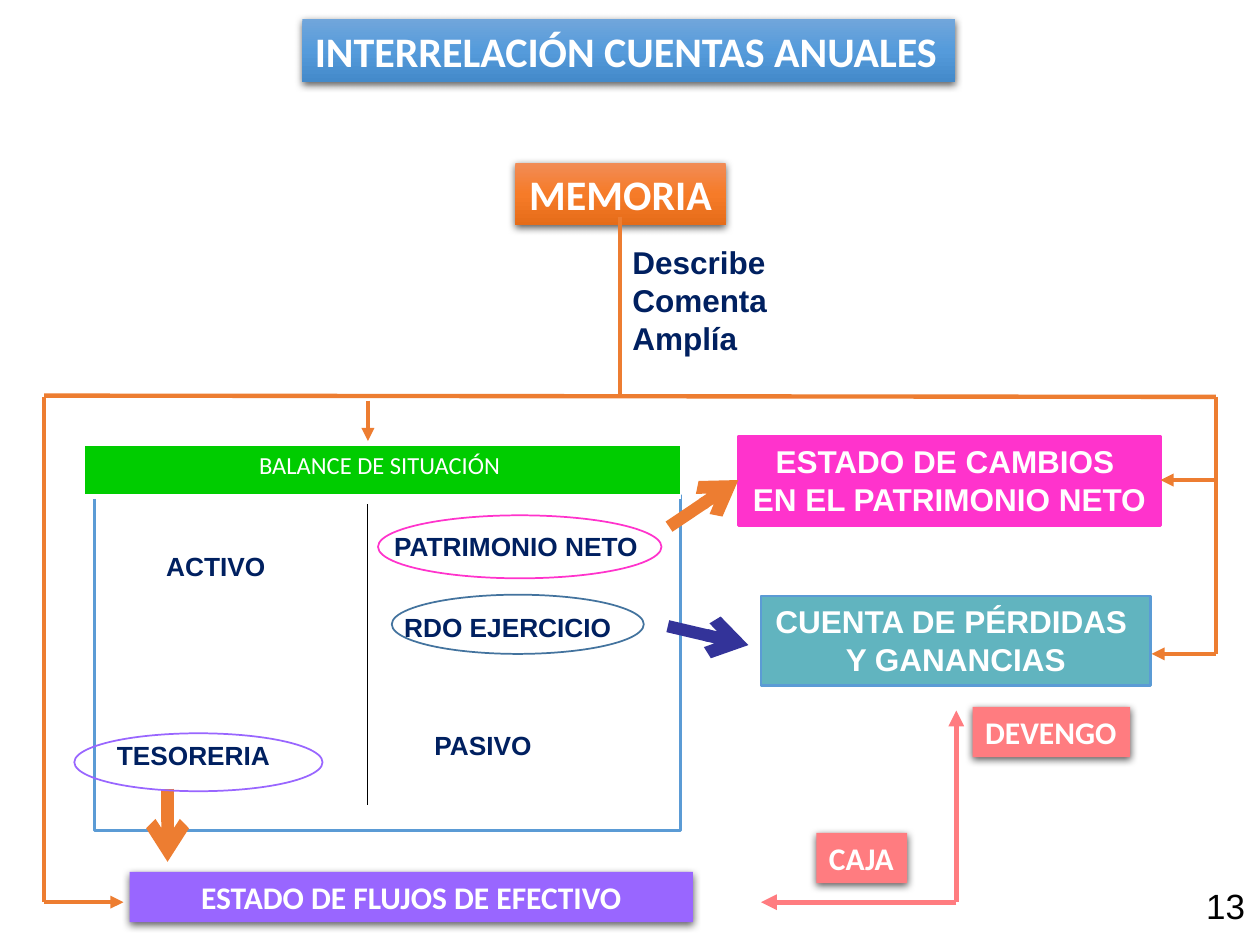
import copy
from dataclasses import dataclass
from typing import Optional

import pptx
import pptx.dml.color
import pptx.enum.shapes
import pptx.enum.text
import pptx.oxml
import pptx.oxml.ns
import pptx.util
from lxml import etree

Inches = pptx.util.Inches
Pt = pptx.util.Pt
qn = pptx.oxml.ns.qn
Kind = pptx.enum.shapes.MSO_SHAPE
Align = pptx.enum.text.PP_ALIGN
Anchor = pptx.enum.text.MSO_ANCHOR


@dataclass(frozen=True)
class Theme:
    white: str = "FFFFFF"
    black: str = "000000"
    navy: str = "002060"
    orange: str = "ED7D31"
    blue: str = "5B9BD5"
    steel: str = "43739E"
    indigo: str = "333399"
    pink: str = "FF33CC"
    purple: str = "9966FF"
    teal: str = "61B4BF"
    coral: str = "FF7C80"
    green: str = "00CC00"
    warm: tuple = ("F18C57", "F67B28", "E56C19")
    cool: tuple = ("71A6DB", "559BDB", "448ACA")
    head: int = 24
    page: int = 20
    body: int = 18
    label: int = 15
    bar: int = 14
    sans: str = "Arial"
    title: str = "Calibri"


T = Theme()


@dataclass
class Box:
    at: tuple
    text: tuple = ()
    fill: Optional[object] = None
    line: Optional[str] = None
    width: float = 1.5
    shade: bool = False
    kind: object = Kind.RECTANGLE
    font: str = T.title
    size: int = T.body
    align: object = Align.CENTER


@dataclass
class Note:
    at: tuple
    text: tuple
    size: int = T.label
    color: str = T.navy
    bold: bool = True
    align: object = Align.LEFT
    anchor: object = Anchor.TOP
    wrap: bool = False


@dataclass
class Wire:
    start: tuple
    end: tuple
    color: str = T.orange
    width: float = 2.5
    head: str = ""
    tail: str = ""


def rgb(code: str):
    return pptx.dml.color.RGBColor.from_string(code)


def place(at: tuple) -> list:
    return [Inches(n) for n in at]


def write(frame, lines, font, size, color, bold, align) -> None:
    for i, line in enumerate(lines):
        para = frame.paragraphs[0] if i == 0 else frame.add_paragraph()
        para.alignment = align
        run = para.add_run()
        run.text = line
        run.font.name, run.font.size, run.font.bold = font, Pt(size), bold
        run.font.color.rgb = rgb(color)


def blend(shape, colors: tuple) -> None:
    shape.fill.gradient()
    shape.fill.gradient_angle = 270
    stops = shape._element.spPr.find(".//" + qn("a:gsLst"))
    stops.insert(1, copy.deepcopy(stops[0]))
    for i, (stop, code) in enumerate(zip(shape.fill.gradient_stops, colors)):
        stop.position = i / 2
        stop.color.rgb = rgb(code)


def shadow(shape) -> None:
    group = shape._element.spPr.find(qn("a:effectLst"))
    drop = etree.SubElement(group, qn("a:outerShdw"), blurRad=str(Pt(4.5)),
                            dist=str(Pt(1.5)), dir="5400000", algn="ctr", rotWithShape="0")
    tint = etree.SubElement(drop, qn("a:srgbClr"), val=T.black)
    etree.SubElement(tint, qn("a:alpha"), val="63000")


def draw_box(slide, box: Box) -> None:
    shape = slide.shapes.add_shape(box.kind, *place(box.at))
    shape.shadow.inherit = False
    if isinstance(box.fill, tuple):
        blend(shape, box.fill)
    elif box.fill:
        shape.fill.solid()
        shape.fill.fore_color.rgb = rgb(box.fill)
    else:
        shape.fill.background()
    if box.line:
        shape.line.color.rgb = rgb(box.line)
        shape.line.width = Pt(box.width)
    else:
        shape.line.fill.background()
    if box.shade:
        shadow(shape)
    if box.text:
        frame = shape.text_frame
        frame.word_wrap = False
        frame.vertical_anchor = Anchor.TOP
        write(frame, box.text, box.font, box.size, T.white, True, box.align)


def draw_note(slide, note: Note) -> None:
    frame = slide.shapes.add_textbox(*place(note.at)).text_frame
    frame.word_wrap = note.wrap
    frame.vertical_anchor = note.anchor
    write(frame, note.text, T.sans, note.size, note.color, note.bold, note.align)


def draw_wire(slide, wire: Wire) -> None:
    link = slide.shapes.add_connector(pptx.enum.shapes.MSO_CONNECTOR.STRAIGHT,
                                      *place(wire.start + wire.end))
    link.line.color.rgb = rgb(wire.color)
    link.line.width = Pt(wire.width)
    for tag, tip in (("a:headEnd", wire.head), ("a:tailEnd", wire.tail)):
        if tip:
            etree.SubElement(link.line._get_or_add_ln(), qn(tag), type=tip)
    etree.SubElement(link._element.spPr, qn("a:effectLst"))


def draw_bar(slide, at: tuple, text: str) -> None:
    table = slide.shapes.add_table(1, 1, *place(at)).table
    table.horz_banding = False
    cell = table.cell(0, 0)
    cell.margin_top = cell.margin_bottom = Inches(0.05)
    write(cell.text_frame, (text,), T.title, T.bar, T.white, False, Align.CENTER)
    props = cell._tc.get_or_add_tcPr()
    for side, width in (("L", 1), ("R", 1), ("T", 1), ("B", 3)):
        edge = etree.SubElement(props, qn("a:ln" + side), w=str(Pt(width)))
        paint = etree.SubElement(edge, qn("a:solidFill"))
        etree.SubElement(paint, qn("a:srgbClr"), val=T.white)
    cell.fill.solid()
    cell.fill.fore_color.rgb = rgb(T.green)


# Statements and the balance sheet frame
BOXES = [
    Box((4.09, 1.29, 1.67, 0.5), ("MEMORIA",), T.warm, shade=True, size=T.head),
    Box((0.75, 3.93, 4.65, 2.66), line=T.blue),
    Box((1.03, 6.92, 4.47, 0.4), ("ESTADO DE FLUJOS DE EFECTIVO",), T.purple, shade=True),
    Box((6.04, 4.73, 3.09, 0.71), ("CUENTA DE PÉRDIDAS ", "Y GANANCIAS"),
        T.teal, T.blue, font=T.sans),
    Box((5.86, 3.46, 3.35, 0.71), ("ESTADO DE CAMBIOS ", "EN EL PATRIMONIO NETO"),
        T.pink, T.pink, font=T.sans),
    Box((3.11, 4.72, 2, 0.47), line=T.steel, width=1, kind=Kind.OVAL),
    Box((3, 4.09, 2.25, 0.5), line=T.pink, width=1, kind=Kind.OVAL),
]
# Title, accrual and cash tags
TAGS = [
    Box((7.72, 5.61, 1.25, 0.4), ("DEVENGO",), T.coral, shade=True, align=Align.LEFT),
    Box((6.48, 6.61, 0.72, 0.4), ("CAJA",), T.coral, shade=True, align=Align.LEFT),
    Box((2.4, 0.15, 5.18, 0.5), ("INTERRELACIÓN CUENTAS ANUALES",), T.cool,
        shade=True, size=T.head, align=Align.LEFT),
]
RING = Box((0.59, 5.82, 1.97, 0.46), line=T.purple, width=1, kind=Kind.OVAL)

LEFT, RIGHT, TOP, BASE, MID = 0.35, 9.65, 3.15, 7.16, 2.92
TIP = "triangle"
WIRES = [
    Wire((MID, 4), (MID, 6.39), T.black, 0.5),
    # Branches from the notes
    Wire((4.92, 1.72), (4.92, 3.14)),
    Wire((LEFT, 3.14), (RIGHT, TOP)),
    Wire((MID, 3.18), (MID, 3.5), tail=TIP),
    Wire((LEFT, TOP), (LEFT, BASE)),
    Wire((LEFT, BASE), (0.98, BASE), tail=TIP),
    Wire((RIGHT, TOP), (RIGHT, 3.84)),
    Wire((9.21, 3.81), (RIGHT, 3.81), head=TIP),
    Wire((RIGHT, 3.84), (RIGHT, 5.19)),
    Wire((9.14, 5.19), (RIGHT, 5.19), head=TIP),
    # Thick arrows from the balance sheet items
    Wire((5.3, 4.97), (5.94, 5.12), T.indigo, 7, tail="arrow"),
    Wire((5.31, 4.18), (5.86, 3.81), width=7, tail="arrow"),
    Wire((1.33, 6.26), (1.33, 6.84), width=7, tail="arrow"),
    # Accrual and cash axes
    Wire((7.59, BASE), (6.04, BASE), T.coral, 3, tail=TIP),
    Wire((7.59, BASE), (7.59, 5.64), T.coral, 3, tail=TIP),
]
NOTES = [
    Note((4.92, 1.88, 1.28, 1.01), ("Describe", "Comenta", "Amplía"), T.body),
    Note((3.03, 4.16, 2.15, 0.35), ("PATRIMONIO NETO",)),
    Note((3.11, 4.8, 1.86, 0.35), ("RDO EJERCICIO",)),
    Note((1.22, 4.32, 0.99, 0.35), ("ACTIVO",)),
    Note((3.35, 5.74, 1.5, 0.35), ("PASIVO",), wrap=True),
    Note((0.83, 5.82, 1.43, 0.35), ("TESORERIA",)),
    Note((7.65, 6.93, 2.33, 0.52), ("13",), T.page, T.black, False,
         Align.RIGHT, Anchor.MIDDLE, True),
]


def main() -> None:
    deck = pptx.Presentation()
    deck.slide_width, deck.slide_height = Inches(10), Inches(7.5)
    slide = deck.slides.add_slide(deck.slide_layouts[6])
    for box in BOXES:
        draw_box(slide, box)
    for wire in WIRES:
        draw_wire(slide, wire)
    draw_box(slide, RING)
    draw_bar(slide, (0.67, 3.53, 4.73, 0.41), "BALANCE DE SITUACIÓN ")
    for note in NOTES:
        draw_note(slide, note)
    for tag in TAGS:
        draw_box(slide, tag)
    deck.save("out.pptx")


if __name__ == "__main__":
    main()
